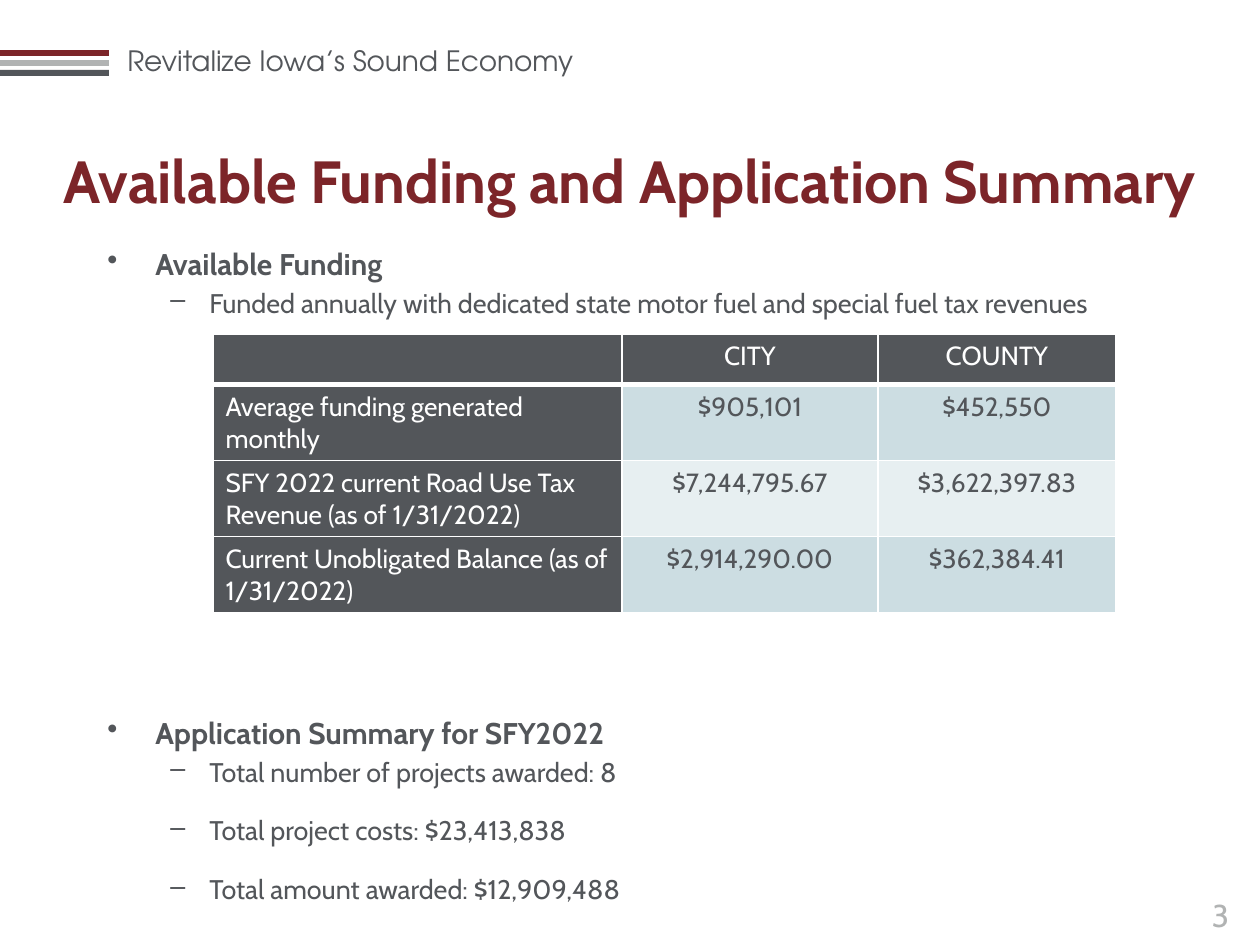
import pptx
import pptx.dml.color
import pptx.enum.shapes
import pptx.enum.text
import pptx.oxml
import pptx.oxml.ns
import pptx.util

EMU_PER_PX = 914400 / 126
MAROON, SILVER, SLATE, WHITE = "7C2529", "B1B3B3", "53565A", "FFFFFF"
BANDS = ["CCDDE2", "E7EFF1"]
CENTER = pptx.enum.text.PP_ALIGN.CENTER
LEFT = pptx.enum.text.PP_ALIGN.LEFT
LEVELS = [
    {"mark": "•", "margin": 48, "hang": 48, "after": 0, "size": 17.1, "bold": True},
    {"mark": "–", "margin": 102, "hang": 39, "after": 12, "size": 15.4, "bold": False},
]


def px(length):
    return pptx.util.Emu(round(length * EMU_PER_PX))


def color(code):
    return pptx.dml.color.RGBColor.from_string(code)


def apply(target, formats):
    for name, value in formats.items():
        setattr(target, name, value)


def paint(fill, code):
    fill.solid()
    fill.fore_color.rgb = color(code)


def write(para, text, size, code, bold=False, font="Cabin"):
    span = para.add_run()
    span.text = text
    apply(span.font, {"name": font, "size": pptx.util.Pt(size), "bold": bold})
    span.font.color.rgb = color(code)


def text_frame(page, box):
    frame = page.shapes.add_textbox(*map(px, box)).text_frame
    frame.word_wrap = True
    return frame


def header(page, left, top, width, height):
    for index, code in enumerate([MAROON, SILVER, SLATE]):
        stripe = page.shapes.add_shape(
            pptx.enum.shapes.MSO_SHAPE.RECTANGLE,
            px(left), px(top + 13 + 10 * index), px(109), px(6))
        stripe.shadow.inherit = False
        paint(stripe.fill, code)
        stripe.line.fill.background()
    frame = text_frame(page, (left + 115, top, width - 115, height))
    write(frame.paragraphs[0], "Revitalize Iowa’s Sound Economy", 16, SLATE,
          font="TeX Gyre Adventor")


def centered_text(page, box, text, size, code, bold=False):
    frame = text_frame(page, box)
    frame.vertical_anchor = pptx.enum.text.MSO_ANCHOR.MIDDLE
    frame.paragraphs[0].alignment = CENTER
    write(frame.paragraphs[0], text, size, code, bold)


def outline(page, box, heading, details):
    frame = text_frame(page, box)
    for index, text in enumerate([heading, *details]):
        para = frame.add_paragraph() if index else frame.paragraphs[0]
        level = LEVELS[min(index, 1)]
        properties = para._p.get_or_add_pPr()
        properties.set("marL", str(px(level["margin"])))
        properties.set("indent", str(-px(level["hang"])))
        bullet = pptx.oxml.ns.qn("a:buChar")
        properties.append(properties.makeelement(bullet, {"char": level["mark"]}))
        apply(para, {
            "level": min(index, 1),
            "space_before": pptx.util.Pt(3 if index else 0),
            "space_after": pptx.util.Pt(level["after"]),
        })
        write(para, text, level["size"], SLATE, level["bold"])


def add_border(cell, side, points):
    cell._tc.get_or_add_tcPr().append(pptx.oxml.parse_xml(
        f'<a:ln{side} {pptx.oxml.ns.nsdecls("a")} w="{pptx.util.Pt(points)}">'
        f'<a:solidFill><a:srgbClr val="{WHITE}"/></a:solidFill></a:ln{side}>'))


def funding_table(page, left, top, widths, heights, rows):
    table = page.shapes.add_table(
        len(rows), len(widths), px(left), px(top),
        px(sum(widths)), px(sum(heights))).table
    for column, width in zip(table.columns, widths):
        column.width = px(width)
    for row, height in zip(table.rows, heights):
        row.height = px(height)
    for y, texts in enumerate(rows):
        for x, text in enumerate(texts):
            cell = table.cell(y, x)
            for side in "LRTB":
                heavy = (side == "B" and y == 0) or (side == "T" and y == 1)
                add_border(cell, side, 3 if heavy else 1)
            is_label = x == 0 or y == 0
            paint(cell.fill, SLATE if is_label else BANDS[(y - 1) % 2])
            para = cell.text_frame.paragraphs[0]
            para.alignment = CENTER if x else LEFT
            if text:
                write(para, text, 15, WHITE if is_label else SLATE)


def funding_page(page):
    header(page, 0, 37, 630, 47)
    centered_text(page, (1166, 890, 109, 50), "3", 18, SILVER)
    outline(page, (95, 239, 1071, 95), "Available Funding", [
        "Funded annually with dedicated state motor fuel and special fuel tax revenues",
    ])
    outline(page, (95, 708, 1071, 237), "Application Summary for SFY2022", [
        "Total number of projects awarded: 8",
        "Total project costs: $23,413,838",
        "Total amount awarded: $12,909,488",
    ])
    centered_text(page, (15, 155, 1230, 49),
                  "Available Funding and Application Summary", 34, MAROON, True)
    funding_table(page, 213, 334, [409, 256, 238], [49, 76, 76, 76], [
        ["", "CITY", "COUNTY"],
        ["Average funding generated monthly", "$905,101", "$452,550"],
        ["SFY 2022 current Road Use Tax Revenue (as of 1/31/2022)",
         "$7,244,795.67", "$3,622,397.83"],
        ["Current Unobligated Balance (as of 1/31/2022)",
         "$2,914,290.00", "$362,384.41"],
    ])


def main():
    deck = pptx.Presentation()
    apply(deck, {"slide_width": px(1260), "slide_height": px(945)})
    funding_page(deck.slides.add_slide(deck.slide_layouts[6]))
    deck.save("out.pptx")


if __name__ == "__main__":
    main()
